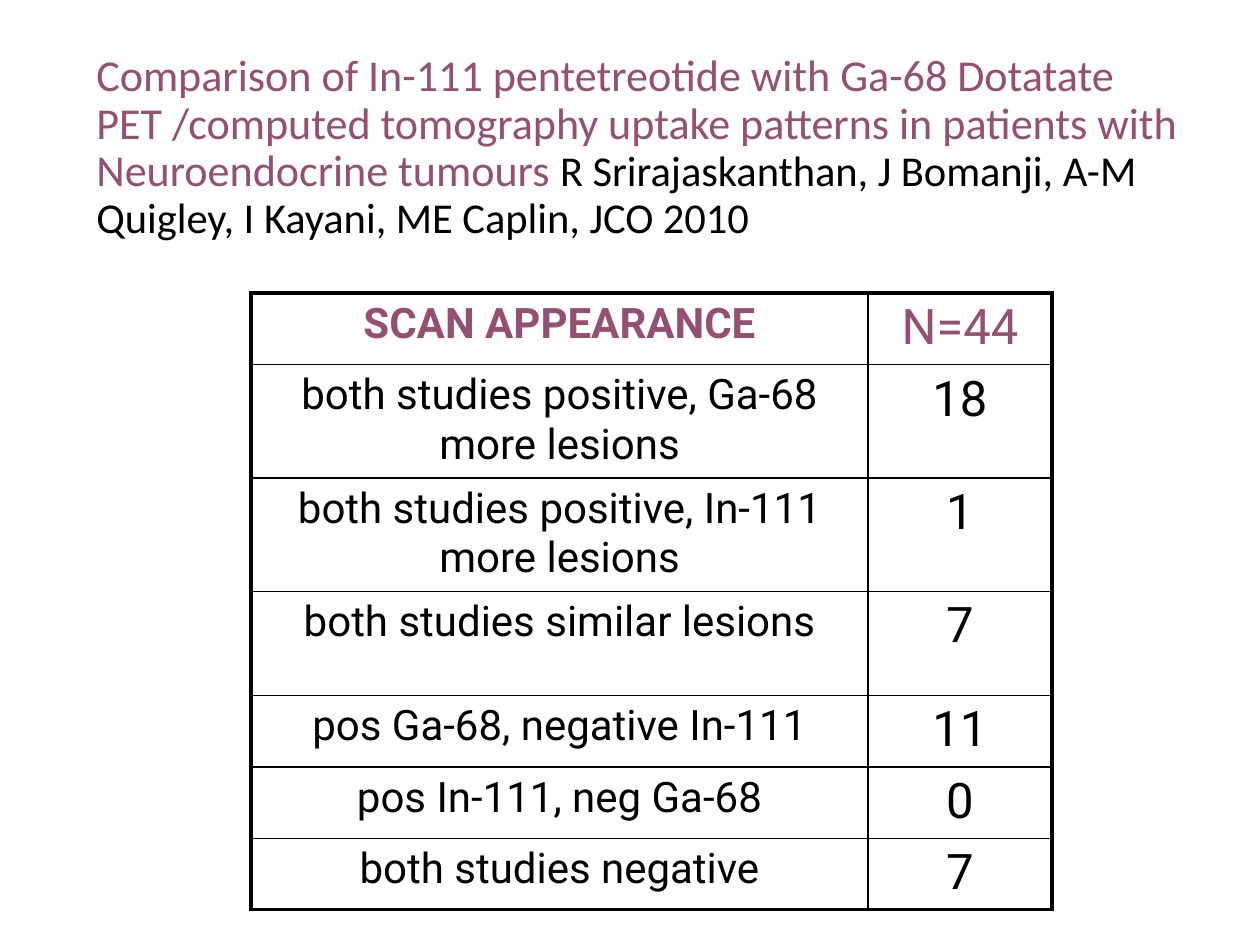
from lxml.etree import SubElement
from pptx import Presentation
from pptx.dml.color import RGBColor
from pptx.enum.text import MSO_ANCHOR, PP_ALIGN
from pptx.oxml.ns import qn
from pptx.util import Pt

PX = 914400 // 126  # EMU per px
COLORS = {"plum": "954F72", "black": "000000"}

TITLE = [
    ("Comparison of In-111 pentetreotide with Ga-68 Dotatate PET /computed "
     "tomography uptake patterns in patients with Neuroendocrine tumours ",
     25.2, "plum"),
    ("R Srirajaskanthan, J Bomanji, A-M Quigley, I Kayani, ME Caplin, JCO 2010",
     24.3, "black"),
]
WIDTHS = [617, 184]
# Scan appearance, count, row height
ROWS = [
    ("SCAN APPEARANCE", "N=44", 70),
    ("both studies positive, Ga-68 more lesions", "18", 111),
    ("both studies positive, In-111 more lesions", "1", 111),
    ("both studies similar lesions", "7", 104),
    ("pos Ga-68, negative In-111", "11", 70),
    ("pos In-111, neg Ga-68", "0", 70),
    ("both studies negative", "7", 70),
]


def px(*sizes):
    return [size * PX for size in sizes]


def style(font, name, size, color, bold=False):
    font.name, font.size, font.bold = name, Pt(size), bold
    font.color.rgb = RGBColor.from_string(COLORS[color])


def add_title(slide):
    frame = slide.shapes.add_textbox(*px(84, 47, 1134, 202)).text_frame
    frame.word_wrap = True
    frame.vertical_anchor = MSO_ANCHOR.MIDDLE
    para = frame.paragraphs[0]
    para.line_spacing = 0.9
    for text, size, color in TITLE:
        run = para.add_run()
        run.text = text
        style(run.font, "Calibri", size, color)


def add_edge(cell, side, width):
    line = SubElement(cell._tc.get_or_add_tcPr(), qn(f"a:ln{side}"), w=str(Pt(width)))
    fill = SubElement(line, qn("a:solidFill"))
    SubElement(fill, qn("a:srgbClr"), val=COLORS["black"])


def fill_cell(cell, text, size, color, bold, outer):
    para = cell.text_frame.paragraphs[0]
    para.text = text
    para.alignment = PP_ALIGN.CENTER
    style(para.font, "Roboto", size, color, bold)
    # Heavy frame outside, thin rules inside
    for side in "LRTB":
        add_edge(cell, side, 2.25 if side in outer else 1)
    cell.fill.background()


def add_grid(slide):
    high = sum(row[-1] for row in ROWS)
    table = slide.shapes.add_table(
        len(ROWS), len(WIDTHS), *px(251, 293, sum(WIDTHS), high)).table
    table.first_row = table.horz_banding = False
    for col, width in zip(table.columns, WIDTHS):
        col.width = width * PX
    for i, (label, count, height) in enumerate(ROWS):
        table.rows[i].height = height * PX
        head = i == 0
        color = "plum" if head else "black"
        ends = ("T" if head else "") + ("B" if i == len(ROWS) - 1 else "")
        fill_cell(table.cell(i, 0), label, 24, color, head, "L" + ends)
        fill_cell(table.cell(i, 1), count, 28, color, False, "R" + ends)


def main():
    deck = Presentation()
    deck.slide_width, deck.slide_height = px(1260, 945)
    slide = deck.slides.add_slide(deck.slide_layouts[6])
    add_title(slide)
    add_grid(slide)
    deck.save("out.pptx")


if __name__ == "__main__":
    main()
